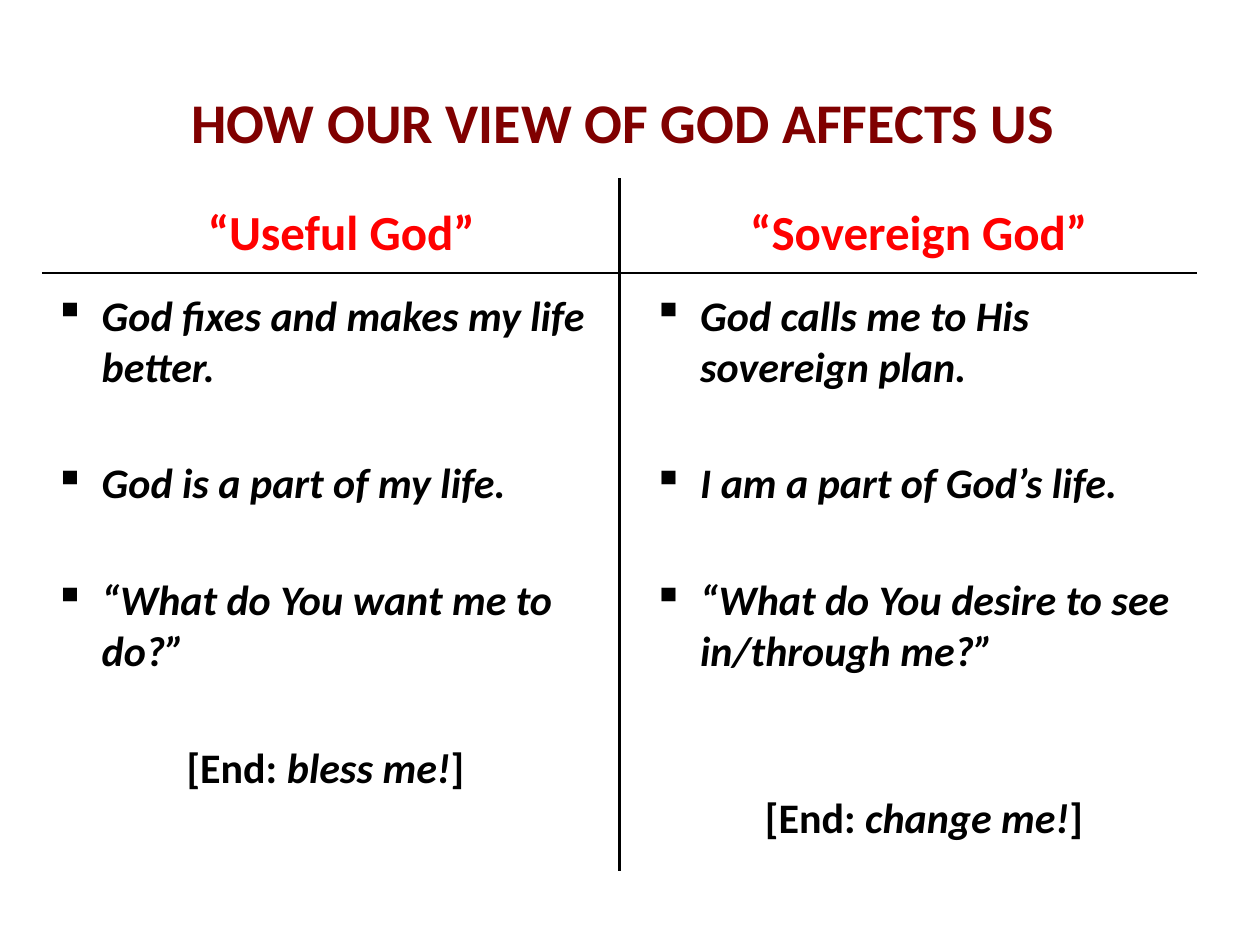
from lxml.etree import SubElement
from pptx import Presentation
from pptx.dml.color import RGBColor
from pptx.enum.shapes import MSO_CONNECTOR
from pptx.enum.text import MSO_ANCHOR, MSO_AUTO_SIZE, PP_ALIGN
from pptx.oxml.ns import qn
from pptx.util import Pt

MAROON = RGBColor(0x80, 0x00, 0x00)
RED = RGBColor(0xFF, 0x00, 0x00)
BLACK = RGBColor(0x00, 0x00, 0x00)
INDENT = Pt(27)
PARA_GAP = 38

COLUMNS = [
    {
        "heading": "“Useful God”",
        "heading_left": 36,
        "body_left": 24,
        "points": [
            "God fixes and makes my life better.",
            "God is a part of my life.",
            "“What do You want me to do?”",
        ],
        "end": "bless me!",
        "end_gap": PARA_GAP,
    },
    {
        "heading": "“Sovereign God”",
        "heading_left": 366,
        "body_left": 366,
        "points": [
            "God calls me to His sovereign plan.",
            "I am a part of God’s life.",
            "“What do You desire to see in/through me?”",
        ],
        "end": "change me!",
        "end_gap": 67,
    },
]
# Start x, start y, end x, end y
RULES = [(24, 156, 684, 156), (354, 102, 354, 498)]


def add_span(para, text, size=24, color=BLACK, italic=False):
    span = para.add_run()
    span.text = text
    span.font.name = "Calibri"
    span.font.size = Pt(size)
    span.font.bold = True
    span.font.italic = italic
    span.font.color.rgb = color


def add_box(left, top, width, height, anchor):
    box = page.shapes.add_textbox(Pt(left), Pt(top), Pt(width), Pt(height))
    box.text_frame.word_wrap = True
    box.text_frame.vertical_anchor = anchor
    return box.text_frame


deck = Presentation()
deck.slide_width, deck.slide_height = Pt(720), Pt(540)
page = deck.slides.add_slide(deck.slide_layouts[5])

title = page.shapes.title
title.left, title.top, title.width, title.height = Pt(32), Pt(42), Pt(648), Pt(54)
title.text_frame.auto_size = MSO_AUTO_SIZE.NONE
title.text_frame.vertical_anchor = MSO_ANCHOR.MIDDLE
title_para = title.text_frame.paragraphs[0]
title_para.alignment = PP_ALIGN.CENTER
add_span(title_para, "HOW OUR VIEW OF GOD AFFECTS US", size=32, color=MAROON)

for column in COLUMNS:
    heading = add_box(column["heading_left"], 102, 318, 50.4, MSO_ANCHOR.BOTTOM)
    heading_para = heading.paragraphs[0]
    heading_para.alignment = PP_ALIGN.CENTER
    add_span(heading_para, column["heading"], size=28, color=RED)

    body = add_box(column["body_left"], 162, 324, 366, MSO_ANCHOR.TOP)
    for index, point in enumerate(column["points"]):
        para = body.add_paragraph() if index else body.paragraphs[0]
        properties = para._p.get_or_add_pPr()
        properties.set("marL", str(INDENT))
        properties.set("indent", str(-INDENT))
        SubElement(properties, qn("a:buChar"), char="▪")
        if index:
            para.space_before = Pt(PARA_GAP)
        add_span(para, point, italic=True)

    end_para = body.add_paragraph()
    end_para.alignment = PP_ALIGN.CENTER
    end_para.space_before = Pt(column["end_gap"])
    add_span(end_para, "[End: ")
    add_span(end_para, column["end"], italic=True)
    add_span(end_para, "]")

for ends in RULES:
    rule = page.shapes.add_connector(MSO_CONNECTOR.STRAIGHT, *map(Pt, ends))
    rule.line.color.rgb = BLACK
    rule.line.width = Pt(1.5)
    SubElement(rule._element.spPr, qn("a:effectLst"))

deck.save("out.pptx")
